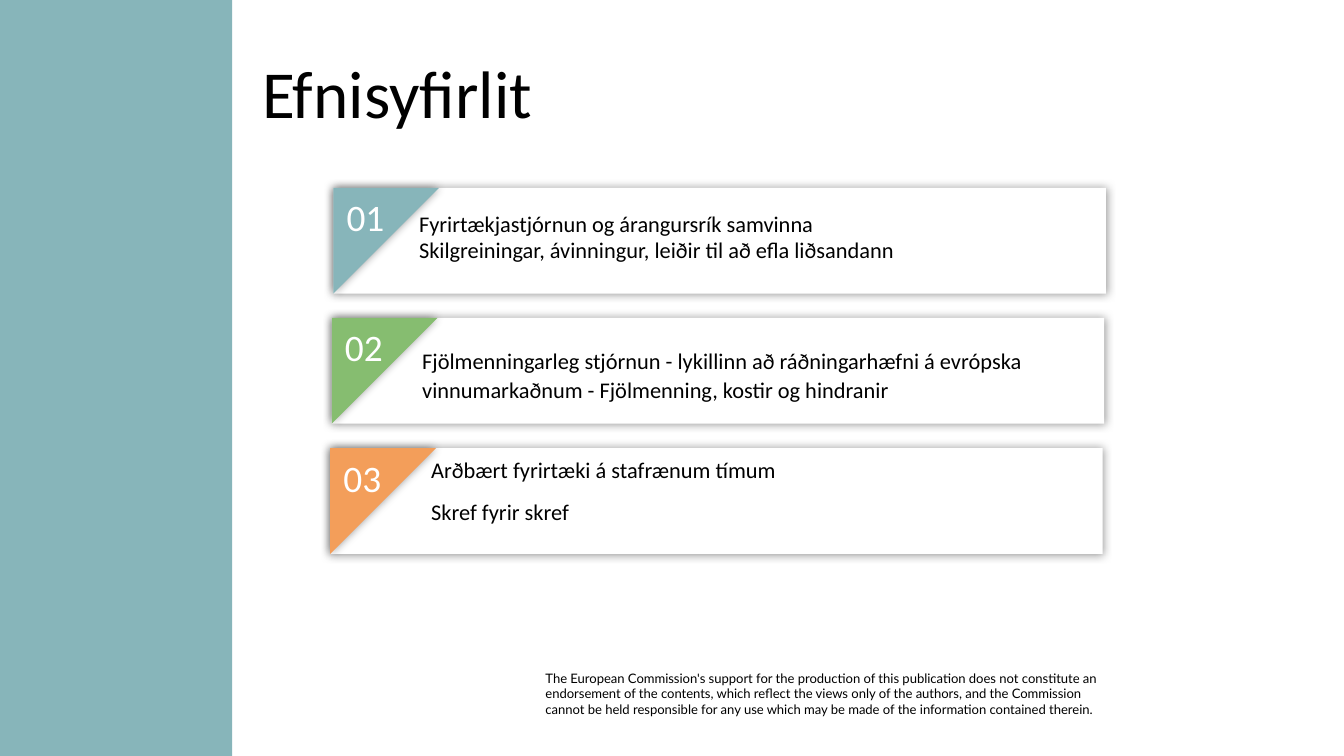
"""Build the table of contents slide with three numbered cards."""
from dataclasses import dataclass

from pptx import Presentation
from pptx.dml.color import RGBColor
from pptx.enum.shapes import MSO_SHAPE
from pptx.enum.text import MSO_ANCHOR, MSO_AUTO_SIZE, PP_ALIGN
from pptx.oxml import parse_xml
from pptx.oxml.ns import nsdecls, qn
from pptx.shapes.autoshape import Shape
from pptx.slide import Slide
from pptx.text.text import TextFrame
from pptx.util import Cm, Pt

COLORS = {
    "teal": "87B5BA",
    "green": "86BD70",
    "orange": "F39E5A",
    "white": "FFFFFF",
    "black": "000000",
}
CARD_LEFT, CARD_TOP, CARD_STEP, CARD_DRIFT = 6.3, 3.55, 2.46, -0.03
CARD_WIDTH, CARD_HEIGHT = 14.6, 2.0


@dataclass(frozen=True)
class Box:
    left: float
    top: float
    width: float
    height: float

    def lengths(self) -> tuple[Cm, Cm, Cm, Cm]:
        return Cm(self.left), Cm(self.top), Cm(self.width), Cm(self.height)


@dataclass(frozen=True)
class Topic:
    color: str
    lines: tuple[str, ...]
    box: Box
    space_after: float = 0
    line_spacing: float = 1.0


TOPICS = (
    Topic("teal",
          ("Fyrirtækjastjórnun og árangursrík samvinna",
           "Skilgreiningar, ávinningur, leiðir til að efla liðsandann"),
          Box(7.67, 3.84, 13.18, 1.28)),
    Topic("green",
          ("Fjölmenningarleg stjórnun - lykillinn að ráðningarhæfni á evrópska "
           "vinnumarkaðnum - Fjölmenning, kostir og hindranir",),
          Box(7.73, 6.4, 12.38, 1.33), 8, 1.07),
    Topic("orange",
          ("Arðbært fyrirtæki á stafrænum tímum", "Skref fyrir skref"),
          Box(7.9, 8.5, 12.7, 2.44), 8),
)
DISCLAIMER = (
    "The European Commission's support for the production of this publication does not "
    "constitute an endorsement of the contents, which reflect the views only of the "
    "authors, and the Commission",
    "cannot be held responsible for any use which may be made of the information "
    "contained therein.",
)


def write(frame: TextFrame, lines: tuple[str, ...], size: float, color: str = "black",
          font: str = "Calibri", space_after: float = 0, line_spacing: float = 1.0) -> None:
    frame.word_wrap = True
    for index, line in enumerate(lines):
        paragraph = frame.add_paragraph() if index else frame.paragraphs[0]
        paragraph.alignment = PP_ALIGN.LEFT
        paragraph.space_after = Pt(space_after)
        paragraph.line_spacing = line_spacing
        run = paragraph.add_run()
        run.text = line
        run.font.name = font
        run.font.size = Pt(size)
        run.font.color.rgb = RGBColor.from_string(COLORS[color])


def add_text(slide: Slide, box: Box) -> TextFrame:
    return slide.shapes.add_textbox(*box.lengths()).text_frame


def add_filled(shapes, kind: MSO_SHAPE, box: Box, color: str) -> Shape:
    shape = shapes.add_shape(kind, *box.lengths())
    shape.fill.solid()
    shape.fill.fore_color.rgb = RGBColor.from_string(COLORS[color])
    shape.line.fill.background()
    shape.shadow.inherit = False
    return shape


def add_glow_shadow(shape: Shape) -> None:
    effects = shape._element.spPr.find(qn("a:effectLst"))
    effects.append(parse_xml(
        f'<a:outerShdw {nsdecls("a")} blurRad="{Pt(5)}" dist="0" dir="0" algn="ctr" '
        f'rotWithShape="0"><a:srgbClr val="{COLORS["black"]}"><a:alpha val="40000"/>'
        '</a:srgbClr></a:outerShdw>'))


def add_card(slide: Slide, index: int, topic: Topic) -> None:
    left = CARD_LEFT + index * CARD_DRIFT
    top = CARD_TOP + index * CARD_STEP
    card = slide.shapes.add_group_shape()
    panel = add_filled(card.shapes, MSO_SHAPE.RECTANGLE,
                       Box(left, top, CARD_WIDTH, CARD_HEIGHT), "white")
    corner = add_filled(card.shapes, MSO_SHAPE.RIGHT_TRIANGLE,
                        Box(left, top, CARD_HEIGHT, CARD_HEIGHT), topic.color)
    corner.rotation = 90
    for part in (panel, corner):
        add_glow_shadow(part)
    write(add_text(slide, Box(left, top, 1.47, 1.12)), (f"{index + 1:02d}",), 20, "white")
    write(add_text(slide, topic.box), topic.lines, 12,
          space_after=topic.space_after, line_spacing=topic.line_spacing)


def add_title(slide: Slide, text: str, box: Box) -> None:
    title = slide.shapes.title
    title.left, title.top, title.width, title.height = box.lengths()
    title.text_frame.auto_size = MSO_AUTO_SIZE.NONE
    title.text_frame.vertical_anchor = MSO_ANCHOR.MIDDLE
    write(title.text_frame, (text,), 36)


def add_disclaimer(slide: Slide) -> None:
    frame = add_text(slide, Box(10.31, 12.67, 10.59, 0.89))
    frame.margin_left = frame.margin_right = frame.margin_top = frame.margin_bottom = 0
    write(frame, DISCLAIMER, 7, font="Lato")


def main() -> None:
    deck = Presentation()
    deck.slide_width, deck.slide_height = Cm(25.4), Cm(14.29)
    slide = deck.slides.add_slide(deck.slide_layouts[5])
    add_disclaimer(slide)
    add_filled(slide.shapes, MSO_SHAPE.RECTANGLE, Box(0, 0, 4.39, 14.29), "teal")
    add_title(slide, "Efnisyfirlit", Box(4.7, 0.94, 18.29, 1.6))
    for index, topic in enumerate(TOPICS):
        add_card(slide, index, topic)
    deck.save("out.pptx")


if __name__ == "__main__":
    main()
